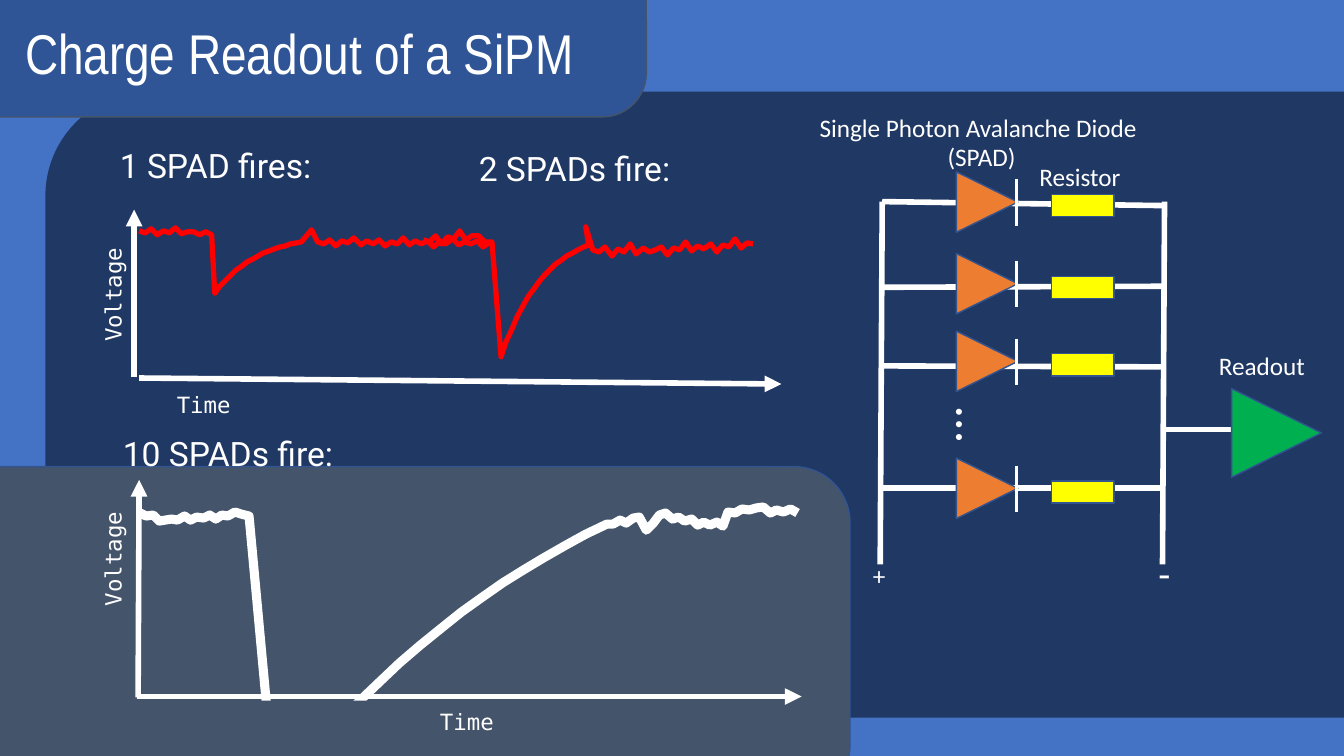
"""Builds the slide on charge readout of a SiPM."""
import collections
import dataclasses
import itertools
import math

import lxml.etree
import pptx
import pptx.dml.color
import pptx.enum.shapes
import pptx.enum.text
import pptx.oxml.ns
import pptx.util

SHAPE = pptx.enum.shapes.MSO_SHAPE
ALIGN = pptx.enum.text.PP_ALIGN


@dataclasses.dataclass(frozen=True)
class Theme:
    sky: str = "4472C4"
    navy: str = "203864"
    slate: str = "44546A"
    banner: str = "2F5597"
    outline: str = "325491"
    white: str = "FFFFFF"
    red: str = "FF0000"
    diode: str = "ED7D31"
    resistor: str = "FFFF00"
    amplifier: str = "00B050"
    title: tuple = ("Arial Narrow", 40)
    heading: tuple = ("Roboto", 24)
    axis: tuple = ("DejaVu Sans Mono", 16)
    label: tuple = ("Calibri", 18)
    minus: tuple = ("Calibri", 28)
    dots: tuple = ("Calibri", 36)
    outline_pt: float = 1
    cathode_pt: float = 2
    wire_pt: float = 4
    small_pulse_pt: float = 3.75
    big_pulse_pt: float = 6.5


class Canvas:
    EMU_PER_PX = 9144

    def __init__(self, slide, theme):
        self.s = slide
        self.theme = theme
        fill = slide.background.fill
        fill.solid()
        fill.fore_color.rgb = self.rgb(theme.sky)

    @staticmethod
    def rgb(color):
        return pptx.dml.color.RGBColor.from_string(color)

    def px(self, *lengths):
        return [n * self.EMU_PER_PX for n in lengths]

    def stroke(self, sp, color, width):
        sp.line.color.rgb = self.rgb(color)
        sp.line.width = pptx.util.Pt(width)

    def shape(self, kind, box, fill, line=None, rotation=0):
        sp = self.s.shapes.add_shape(kind, *self.px(*box))
        sp.shadow.inherit = False
        sp.rotation = rotation
        sp.fill.solid()
        sp.fill.fore_color.rgb = self.rgb(fill)
        if line:
            self.stroke(sp, line, self.theme.outline_pt)
        else:
            sp.line.fill.background()

    def text(self, words, box, style, align=None, rotation=0):
        sp = self.s.shapes.add_textbox(*self.px(*box))
        sp.rotation = rotation
        tf = sp.text_frame
        tf.word_wrap = True
        tf.auto_size = pptx.enum.text.MSO_AUTO_SIZE.SHAPE_TO_FIT_TEXT
        p = tf.paragraphs[0]
        p.alignment = align
        r = p.add_run()
        r.text = words
        r.font.name, size = style
        r.font.size = pptx.util.Pt(size)
        r.font.color.rgb = self.rgb(self.theme.white)

    def line(self, start, end, width=None, arrow=False):
        straight = pptx.enum.shapes.MSO_CONNECTOR.STRAIGHT
        sp = self.s.shapes.add_connector(straight, *self.px(*start, *end))
        self.stroke(sp, self.theme.white, width or self.theme.wire_pt)
        qn = pptx.oxml.ns.qn
        props = sp.element.spPr
        if arrow:
            lxml.etree.SubElement(props.find(qn("a:ln")), qn("a:tailEnd"), type="triangle")
        lxml.etree.SubElement(props, qn("a:effectLst"))

    def trace(self, points, color, width):
        builder = self.s.shapes.build_freeform(*points[0], scale=self.EMU_PER_PX)
        builder.add_line_segments(points[1:], close=False)
        sp = builder.convert_to_shape()
        sp.shadow.inherit = False
        sp.fill.background()
        self.stroke(sp, color, width)


Pulse = collections.namedtuple("Pulse", "before bottom after decay noise")
Plot = collections.namedtuple("Plot", "voltage_axis time_axis voltage_top time_corner")
Branch = collections.namedtuple("Branch", "left_y right_y diode_top")

ONE_SPAD = Pulse(
    before=[(138, 229), (186, 230), (210, 233)], bottom=(213, 291),
    after=[(299, 240), (309, 228), (315, 240), (485, 241)], decay=2, noise=4)
TWO_SPADS = Pulse(
    before=[(420, 238), (468, 234), (488, 240)], bottom=(497, 354),
    after=[(584, 243), (581, 225), (588, 248), (650, 248), (747, 242)], decay=2, noise=6)
TEN_SPADS = Pulse(
    before=[(139, 509), (164, 516), (239, 510), (247, 512)], bottom=(273, 793),
    after=[(602, 520), (634, 513), (641, 526), (654, 511), (717, 522), (722, 508),
           (750, 504), (791, 509)], decay=1, noise=3)
NOISE_STEP = 6
NOISE_CYCLE = (0.4, -0.5, 1, -0.2, 0.3, -1, 0.6, -0.3)
RECOVERY_STEPS = 16

PLOTS = [
    Plot(((133, 374), (133, 208)), ((138, 375), (775, 381)), 274, (68, 383)),
    Plot(((137, 692), (138, 476)), ((136, 691), (795, 691)), 536, (329, 698))]

PLUS_RAIL_X, MINUS_RAIL_X = 875, 1155
RAIL_TOP, RAIL_BOTTOM = 200, 560
DIODE_X, CATHODE_X, RESISTOR_X = 949, 1008, 1043
CATHODE_DROP, CATHODE_LENGTH, RESISTOR_DROP = 8, 46, 23
BRANCHES = [Branch(200, 204, 170), Branch(285, 284, 251),
            Branch(363, 364, 328), Branch(484, 484, 454)]


def noisy_line(waypoints, noise):
    jitter = itertools.cycle(NOISE_CYCLE)
    points = [waypoints[0]]
    for (x0, y0), (x1, y1) in itertools.pairwise(waypoints):
        steps = max(1, abs(x1 - x0) // NOISE_STEP)
        for i in range(1, steps):
            y = y0 + (y1 - y0) * i / steps + noise * next(jitter)
            points.append((round(x0 + (x1 - x0) * i / steps), round(y)))
        points.append((x1, y1))
    return points


def recovery(bottom, recovered, decay):
    (x0, y0), (x1, y1) = bottom, recovered
    points = []
    for i in range(RECOVERY_STEPS):
        t = i / RECOVERY_STEPS
        left = (math.exp(-decay * t) - math.exp(-decay)) / (1 - math.exp(-decay))
        points.append((round(x0 + (x1 - x0) * t), round(y1 + (y0 - y1) * left)))
    return points


def pulse_points(pulse):
    return (noisy_line(pulse.before, pulse.noise)
            + recovery(pulse.bottom, pulse.after[0], pulse.decay)
            + noisy_line(pulse.after, pulse.noise))


def draw_panels(c, t):
    c.shape(SHAPE.ROUNDED_RECTANGLE, (45, 91, 1399, 621), t.navy)
    c.shape(SHAPE.ROUNDED_RECTANGLE, (-71, 463, 914, 332), t.slate, t.outline)
    c.shape(SHAPE.ROUNDED_RECTANGLE, (-111, -146, 752, 262), t.banner, t.slate)
    c.text("Charge Readout of a SiPM", (15, 13, 627, 77), t.title)
    c.text("1 SPAD fires:", (109, 139, 609, 50), t.heading)
    c.text("2 SPADs fire:", (465, 142, 265, 50), t.heading)
    c.text("10 SPADs fire:", (112, 425, 317, 50), t.heading)


def draw_plots(c, t):
    for plot in PLOTS:
        c.line(*plot.voltage_axis, arrow=True)
        c.line(*plot.time_axis, arrow=True)
        c.text("Voltage", (-22, plot.voltage_top, 268, 37), t.axis, ALIGN.CENTER, 270)
        c.text("Time", (*plot.time_corner, 268, 37), t.axis, ALIGN.CENTER)
    for pulse in (ONE_SPAD, TWO_SPADS):
        c.trace(pulse_points(pulse), t.red, t.small_pulse_pt)
    c.trace(pulse_points(TEN_SPADS), t.white, t.big_pulse_pt)
    c.shape(SHAPE.RECTANGLE, (217, 695, 192, 94), t.slate)


def draw_circuit(c, t):
    for branch in BRANCHES:
        c.line((PLUS_RAIL_X, branch.left_y), (MINUS_RAIL_X, branch.right_y))
    for rail_x in (PLUS_RAIL_X, MINUS_RAIL_X):
        c.line((rail_x, RAIL_TOP), (rail_x - 2, RAIL_BOTTOM))
    for branch in BRANCHES:
        top = branch.diode_top
        cathode_y = top + CATHODE_DROP
        c.shape(SHAPE.ISOSCELES_TRIANGLE, (DIODE_X, top, 60, 61), t.diode, t.outline, 90)
        c.line((CATHODE_X, cathode_y), (CATHODE_X, cathode_y + CATHODE_LENGTH), t.cathode_pt)
        c.shape(SHAPE.RECTANGLE, (RESISTOR_X, top + RESISTOR_DROP, 62, 22), t.resistor, t.outline)
    c.text("…", (936, 391, 64, 71), t.dots, rotation=90)
    c.line((MINUS_RAIL_X - 3, 426), (1221, 426))
    c.shape(SHAPE.ISOSCELES_TRIANGLE, (1222, 385, 88, 89), t.amplifier, t.outline, 90)
    c.text("Single Photon Avalanche Diode", (803, 107, 408, 40), t.label)
    c.text("(SPAD)", (930, 135, 97, 40), t.label)
    c.text("Resistor", (1021, 155, 106, 40), t.label)
    c.text("Readout", (1199, 343, 106, 40), t.label)
    c.text("+", (856, 551, 38, 40), t.label)
    c.text("-", (1139, 540, 38, 57), t.minus)


def main():
    prs = pptx.Presentation()
    prs.slide_width = 1333 * Canvas.EMU_PER_PX
    prs.slide_height = 750 * Canvas.EMU_PER_PX
    theme = Theme()
    canvas = Canvas(prs.slides.add_slide(prs.slide_layouts[6]), theme)
    for draw in (draw_panels, draw_plots, draw_circuit):
        draw(canvas, theme)
    prs.save("out.pptx")


if __name__ == "__main__":
    main()
